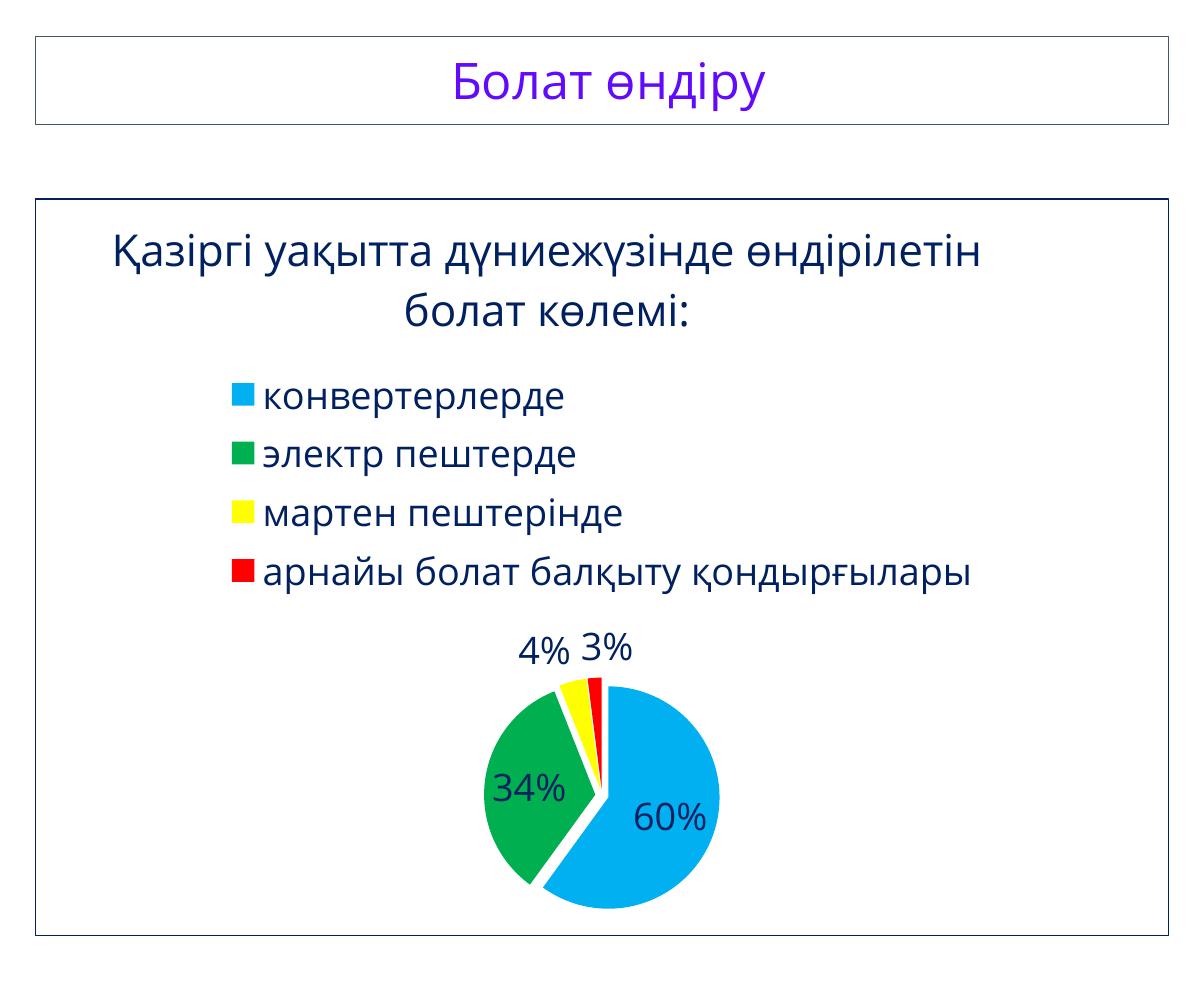
"""Build a slide on steel production with a title box and a pie chart."""
from dataclasses import dataclass

from pptx import Presentation
from pptx.chart.data import CategoryChartData
from pptx.dml.color import RGBColor
from pptx.enum.chart import XL_CHART_TYPE, XL_LABEL_POSITION, XL_LEGEND_POSITION
from pptx.enum.shapes import MSO_SHAPE
from pptx.enum.text import MSO_ANCHOR, MSO_AUTO_SIZE, PP_ALIGN
from pptx.oxml import parse_xml
from pptx.oxml.ns import nsdecls, qn
from pptx.util import Pt

RECTANGLE = MSO_SHAPE.RECTANGLE
PIE = XL_CHART_TYPE.PIE
LEGEND_TOP = XL_LEGEND_POSITION.TOP
BEST_FIT = XL_LABEL_POSITION.BEST_FIT
CENTER = PP_ALIGN.CENTER
MIDDLE = MSO_ANCHOR.MIDDLE
GROW = MSO_AUTO_SIZE.SHAPE_TO_FIT_TEXT

FONT = "Open Sans"
COLORS = {
    "heading": "620BFC",
    "frame": "44546A",
    "navy": "002060",
    "blue": "00B0F0",
    "green": "00B050",
    "yellow": "FFFF00",
    "red": "FF0000",
}
LEFT, WIDTH = 22.3, 720


@dataclass(frozen=True)
class Method:
    name: str
    share: int
    color: str
    label: str = ""


METHODS = [
    Method("конвертерлерде", 60, "blue"),
    Method("электр пештерде", 34, "green"),
    Method("мартен пештерінде", 4, "yellow"),
    Method("арнайы болат балқыту қондырғылары", 2, "red", "3%"),
]


def rgb(color: str) -> RGBColor:
    return RGBColor.from_string(COLORS[color])


def style_font(font, size: float, color: str) -> None:
    font.name = FONT
    font.size = Pt(size)
    font.bold = False
    font.color.rgb = rgb(color)


def write(frame, text: str, *, size: float, color: str, spacing: float = 1.0) -> None:
    paragraph = frame.paragraphs[0]
    paragraph.alignment = CENTER
    paragraph.line_spacing = spacing
    run = paragraph.add_run()
    run.text = text
    style_font(run.font, size, color)


def place(part, index: int, inner: bool = False, **edges: float) -> None:
    for old in part.findall(qn("c:layout")):
        part.remove(old)
    target = '<c:layoutTarget val="inner"/>' if inner else ""
    modes = "".join(f'<c:{axis}Mode val="edge"/>' for axis in "xy")
    values = "".join(f'<c:{edge} val="{value}"/>' for edge, value in edges.items())
    part.insert(index, parse_xml(
        f'<c:layout {nsdecls("c")}><c:manualLayout>{target}{modes}{values}'
        "</c:manualLayout></c:layout>"))


def add_heading(slide) -> None:
    heading = slide.shapes.add_shape(RECTANGLE, Pt(LEFT), Pt(23), Pt(WIDTH), Pt(56.2))
    heading.shadow.inherit = False
    heading.fill.background()
    heading.line.color.rgb = rgb("frame")
    heading.line.width = Pt(0.75)
    frame = heading.text_frame
    frame.word_wrap = True
    frame.auto_size = GROW
    frame.vertical_anchor = MIDDLE
    frame.margin_left = frame.margin_right = Pt(20)
    frame.margin_top, frame.margin_bottom = Pt(10.5), Pt(6.7)
    write(frame, " Болат өндіру", size=32, color="heading", spacing=0.9)


def add_share_chart(slide) -> None:
    shares = CategoryChartData()
    shares.categories = [method.name for method in METHODS]
    shares.add_series("Series 1", [method.share for method in METHODS])
    chart = slide.shapes.add_chart(
        PIE, Pt(LEFT), Pt(126), Pt(WIDTH), Pt(468.5), shares).chart
    style_font(chart.font, 24, "navy")

    chart.has_title = True
    write(chart.chart_title.text_frame,
          "Қазіргі уақытта дүниежүзінде өндірілетін болат көлемі:",
          size=28, color="navy")
    chart.has_legend = True
    chart.legend.position = LEGEND_TOP
    chart.legend.include_in_layout = False
    style_font(chart.legend.font, 24, "navy")

    plot = chart.plots[0]
    plot.vary_by_categories = True
    series = plot.series[0]
    series._element.find(qn("c:tx")).addnext(
        parse_xml(f'<c:explosion {nsdecls("c")} val="6"/>'))

    labels = series.data_labels
    labels.show_percentage = True
    labels.show_value = False
    labels.position = BEST_FIT
    labels.number_format = "0%"
    labels.number_format_is_linked = False
    style_font(labels.font, 24, "navy")

    for index, method in enumerate(METHODS):
        point = series.points[index]
        point.format.fill.solid()
        point.format.fill.fore_color.rgb = rgb(method.color)
        if method.label:
            write(point.data_label.text_frame, method.label, size=24, color="navy")
            point.data_label.position = BEST_FIT

    body = chart.element.find(qn("c:chart"))
    place(body.find(qn("c:title")), 1, x=0.06, y=0.01)
    place(body.find(qn("c:legend")), 1, x=0.17, y=0.22, w=0.66, h=0.33)
    place(body.find(qn("c:plotArea")), 0, inner=True, x=0.39, y=0.65, w=0.22, h=0.32)
    body.addnext(parse_xml(
        f'<c:spPr {nsdecls("c", "a")}><a:noFill/><a:ln w="{Pt(0.75)}"><a:solidFill>'
        f'<a:srgbClr val="{COLORS["navy"]}"/></a:solidFill></a:ln></c:spPr>'))


def main() -> None:
    deck = Presentation()
    deck.slide_width, deck.slide_height = Pt(764.6), Pt(630)
    slide = deck.slides.add_slide(deck.slide_layouts[6])
    add_heading(slide)
    add_share_chart(slide)
    deck.save("out.pptx")


if __name__ == "__main__":
    main()
